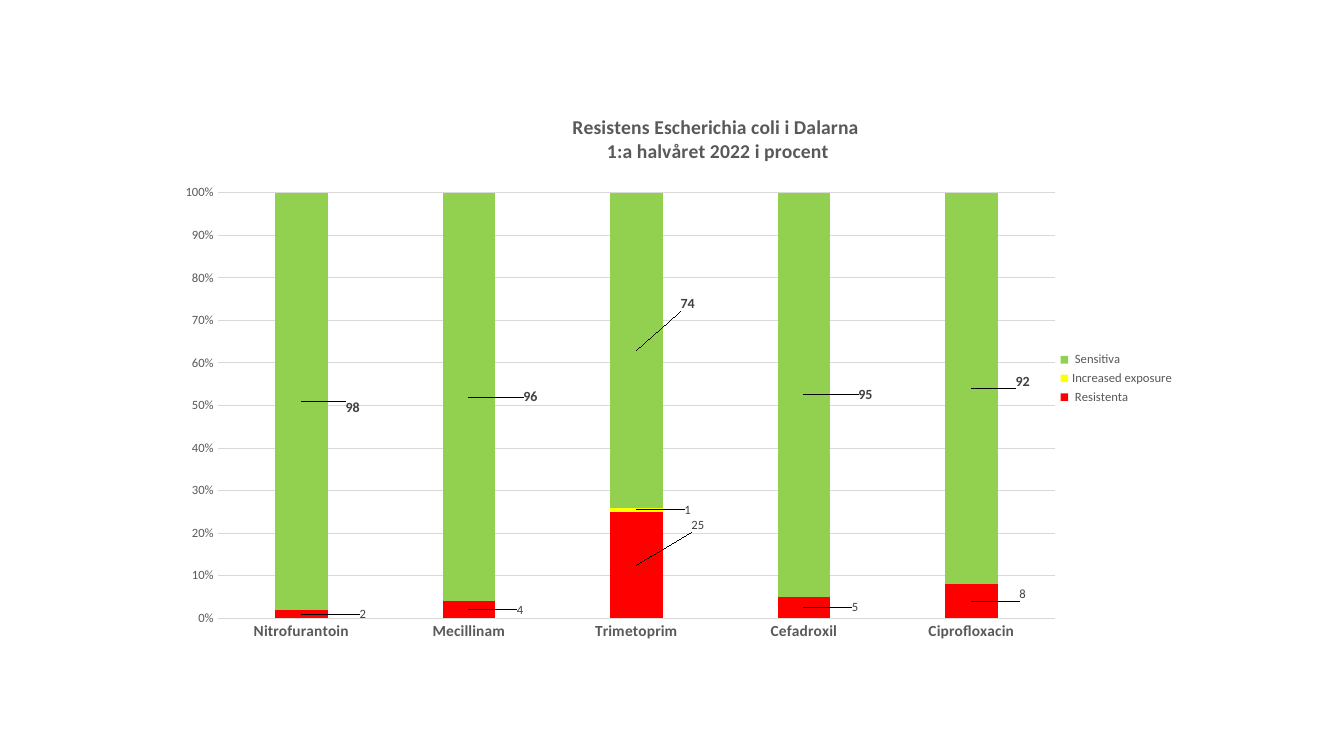
from dataclasses import dataclass

from lxml import etree
from pptx import Presentation
from pptx.chart.data import CategoryChartData
from pptx.dml.color import RGBColor
from pptx.enum.chart import XL_CHART_TYPE, XL_LEGEND_POSITION, XL_TICK_MARK
from pptx.oxml.ns import qn
from pptx.util import Pt

STACKED = XL_CHART_TYPE.COLUMN_STACKED_100
LEGEND_RIGHT = XL_LEGEND_POSITION.RIGHT
NO_TICK = XL_TICK_MARK.NONE

FONT = "Calibri"
COLORS = {
    "resistant": "FF0000",
    "exposure": "FFFF00",
    "sensitive": "92D050",
    "text": "595959",
    "label": "404040",
    "line": "D9D9D9",
    "base": "000000",
}
ANTIBIOTICS = ["Nitrofurantoin", "Mecillinam", "Trimetoprim", "Cefadroxil", "Ciprofloxacin"]
TITLE_LINES = ["Resistens Escherichia coli i Dalarna", " 1:a halvåret 2022 i procent"]


@dataclass
class Outcome:
    name: str
    color: str
    shares: list[int]
    label_size: int
    label_bold: bool
    label_shifts: dict[int, tuple[float, float]]


OUTCOMES = [
    Outcome(" Resistenta", "resistant", [2, 4, 25, 5, 8], 9, False,
            {0: (0.06, 0), 1: (0.05, 0), 2: (0.06, -0.06), 3: (0.05, 0), 4: (0.05, -0.01)}),
    Outcome("Increased exposure", "exposure", [0, 0, 1, 0, 0], 9, False, {2: (0.05, 0)}),
    Outcome(" Sensitiva", "sensitive", [98, 96, 74, 95, 92], 10, True,
            {0: (0.05, 0.01), 1: (0.06, 0), 2: (0.05, -0.07), 3: (0.06, 0), 4: (0.05, -0.01)}),
]


def rgb(color: str) -> RGBColor:
    return RGBColor.from_string(COLORS[color])


def style_font(font, size: int, color: str, bold: bool = False) -> None:
    font.name = FONT
    font.size = Pt(size)
    font.bold = bold
    font.color.rgb = rgb(color)


def style_line(line, color: str) -> None:
    line.color.rgb = rgb(color)
    line.width = Pt(0.75)


def set_layout(parent, index: int, settings: dict) -> None:
    for previous in parent.findall(qn("c:layout")):
        parent.remove(previous)
    layout = etree.Element(qn("c:layout"))
    manual = etree.SubElement(layout, qn("c:manualLayout"))
    for tag, value in settings.items():
        etree.SubElement(manual, qn(f"c:{tag}")).set("val", str(value))
    parent.insert(index, layout)


def style_title(chart) -> None:
    title = chart.chart_title
    frame = title.text_frame
    frame.text = "\n".join(TITLE_LINES)
    for paragraph in frame.paragraphs:
        style_font(paragraph.font, 14, "text", True)
    set_layout(title._element, 1, {"xMode": "edge", "yMode": "edge", "x": 0.4, "y": 0.1})


def style_axes(chart) -> None:
    antibiotic_axis, percent_axis = chart.category_axis, chart.value_axis
    for axis in (antibiotic_axis, percent_axis):
        axis.major_tick_mark = axis.minor_tick_mark = NO_TICK
    style_font(antibiotic_axis.tick_labels.font, 11, "text", True)
    style_line(antibiotic_axis.format.line, "line")
    style_font(percent_axis.tick_labels.font, 9, "text")
    percent_axis.tick_labels.number_format = "0%"
    percent_axis.tick_labels.number_format_is_linked = False
    percent_axis.minimum_scale = 0
    percent_axis.maximum_scale = 1
    percent_axis.major_unit = 0.1
    percent_axis.format.line.fill.background()
    percent_axis.has_major_gridlines = True
    style_line(percent_axis.major_gridlines.format.line, "line")


def style_outcome(series, outcome: Outcome) -> None:
    series.format.fill.solid()
    series.format.fill.fore_color.rgb = rgb(outcome.color)
    series.invert_if_negative = False
    labels = series.data_labels
    labels.show_value = len(outcome.label_shifts) == len(outcome.shares)
    style_font(labels.font, outcome.label_size, "label", outcome.label_bold)
    for index in outcome.label_shifts:
        style_font(series.points[index].data_label.font, outcome.label_size, "label",
                   outcome.label_bold)
    label_elements = series._element.findall(f"{qn('c:dLbls')}/{qn('c:dLbl')}")
    for element, (x, y) in zip(label_elements, outcome.label_shifts.values()):
        set_layout(element, 1, {"x": x, "y": y})


def add_resistance_chart(slide) -> None:
    data = CategoryChartData()
    data.categories = ANTIBIOTICS
    for outcome in OUTCOMES:
        data.add_series(outcome.name, outcome.shares)
    chart = slide.shapes.add_chart(STACKED, Pt(113.76), Pt(30.96), Pt(732.24), Pt(478.8), data).chart
    style_font(chart.font, 10, "base")
    style_title(chart)
    style_axes(chart)
    chart.has_legend = True
    chart.legend.position = LEGEND_RIGHT
    chart.legend.include_in_layout = False
    style_font(chart.legend.font, 9, "text")
    columns = chart.plots[0]
    columns.gap_width = 219
    columns.overlap = 100
    columns.vary_by_categories = False
    for series, outcome in zip(columns.series, OUTCOMES):
        style_outcome(series, outcome)
    plot_area = chart._chartSpace.chart.plotArea
    set_layout(plot_area, 0, {"layoutTarget": "inner", "xMode": "edge", "yMode": "edge",
                              "x": 0.057, "y": 0.223, "w": 0.817, "h": 0.635})


def main() -> None:
    presentation = Presentation()
    presentation.slide_width = Pt(960)
    presentation.slide_height = Pt(540)
    slide = presentation.slides.add_slide(presentation.slide_layouts[6])
    add_resistance_chart(slide)
    presentation.save("out.pptx")


if __name__ == "__main__":
    main()
